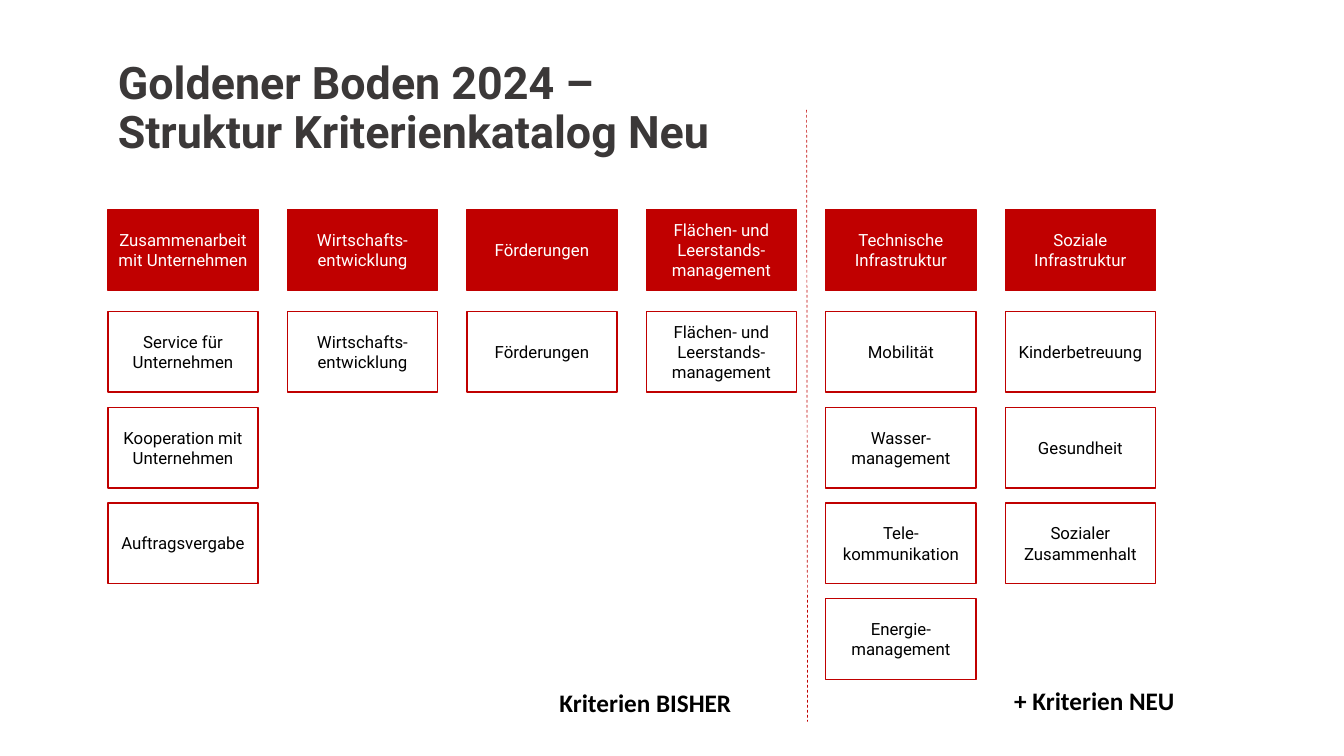
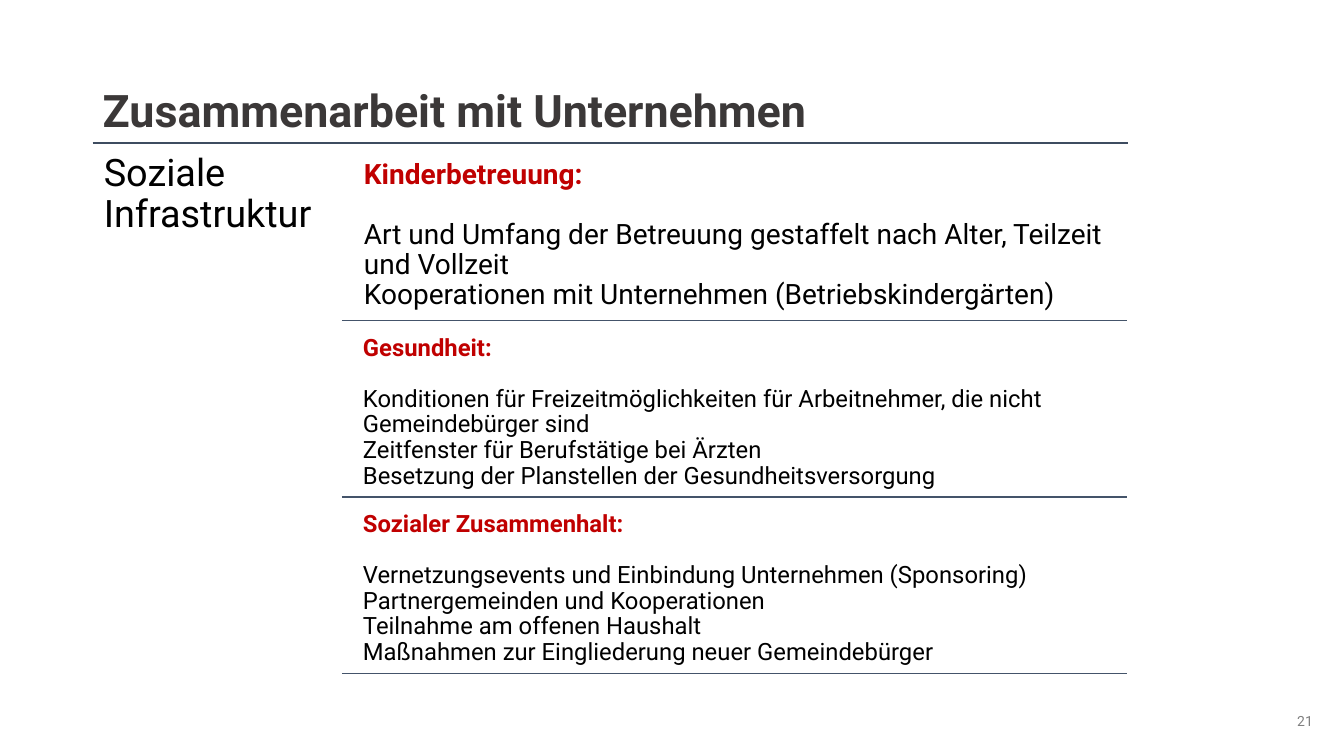
import pptx
import pptx.dml.color
import pptx.enum.dml
import pptx.enum.shapes
import pptx.enum.text
import pptx.oxml.ns
import pptx.util
from lxml import etree

Inches = pptx.util.Inches
Pt = pptx.util.Pt
ALIGN = pptx.enum.text.PP_ALIGN
ANCHOR = pptx.enum.text.MSO_ANCHOR

RED, BLACK, WHITE = "C00000", "000000", "FFFFFF"
TITLE_GREY, NUMBER_GREY = "3B3838", "808080"
RULE_DARK, RULE_BLUE = "3E4C60", "44546A"

TITLE_STYLE = {"size": 32, "bold": True, "color": TITLE_GREY}
TITLE_SIZE = (10.63, 1.45)
CAPTION_STYLE = {"name": "Calibri", "size": 18, "bold": True}

OVERVIEW_TITLE = ["Goldener Boden 2024 –", "Struktur Kriterienkatalog Neu"]
CATEGORIES = [
    ("Zusammenarbeit mit Unternehmen",
     ["Service für Unternehmen", "Kooperation mit Unternehmen", "Auftragsvergabe"]),
    ("Wirtschafts-entwicklung", ["Wirtschafts-entwicklung"]),
    ("Förderungen", ["Förderungen"]),
    ("Flächen- und Leerstands-management", ["Flächen- und Leerstands-management"]),
    ("Technische Infrastruktur",
     ["Mobilität", "Wasser-management", "Tele-kommunikation", "Energie-management"]),
    ("Soziale Infrastruktur",
     ["Kinderbetreuung", "Gesundheit", "Sozialer Zusammenhalt"]),
]
CAPTIONS = [
    ("Kriterien BISHER", (5.45, 6.77, 2.36, 0.4)),
    ("+ Kriterien NEU", (9.96, 6.75, 1.95, 0.4)),
]

DETAIL_TITLE = ["Zusammenarbeit mit Unternehmen"]
DETAIL_TOPIC = "Soziale Infrastruktur"
PAGE_NUMBER = "21"
# heading, text size, inset, lines
SECTIONS = [
    ("Kinderbetreuung:", 20, 0.08, [
        "Art und Umfang der Betreuung gestaffelt nach Alter, Teilzeit und Vollzeit",
        "Kooperationen mit Unternehmen (Betriebskindergärten)"]),
    ("Gesundheit:", 17, 0.07, [
        "Konditionen für Freizeitmöglichkeiten für Arbeitnehmer, die nicht "
        "Gemeindebürger sind",
        "Zeitfenster für Berufstätige bei Ärzten",
        "Besetzung der Planstellen der Gesundheitsversorgung"]),
    ("Sozialer Zusammenhalt:", 17, 0.07, [
        "Vernetzungsevents und Einbindung Unternehmen (Sponsoring)",
        "Partnergemeinden und Kooperationen",
        "Teilnahme am offenen Haushalt",
        "Maßnahmen zur Eingliederung neuer Gemeindebürger"]),
]

COLUMN_LEFT, COLUMN_STEP = 1.07, 1.78
HEADER_TOP, CRITERIA_TOP, CRITERIA_STEP = 2.08, 3.09, 0.95
CARD_SIZE = (1.49, 0.8)
SECTION_TOP, SECTION_STEP, SECTION_HEIGHT = 1.51, 1.75, 1.67


def rgb(value):
    return pptx.dml.color.RGBColor.from_string(value)


def add_paragraph(frame, text, style, **layout):
    """Fill the first paragraph while it is empty, otherwise append one."""
    para = frame.paragraphs[0]
    if para.runs:
        para = frame.add_paragraph()
    for name, value in layout.items():
        setattr(para, name, value)
    span = para.add_run()
    span.text = text
    values = {"name": "Roboto", "size": 12, "bold": False, "color": BLACK} | style
    span.font.color.rgb = rgb(values.pop("color"))
    values["size"] = Pt(values["size"])
    for name, value in values.items():
        setattr(span.font, name, value)


def add_text_box(page, place, anchor=ANCHOR.TOP, inset=None):
    box = page.shapes.add_textbox(*map(Inches, place))
    frame = box.text_frame
    frame.word_wrap = True
    frame.vertical_anchor = anchor
    if inset is not None:
        for side in ("left", "top", "right", "bottom"):
            setattr(frame, f"margin_{side}", Inches(inset))
    return frame


def add_title(page, lines, left, top):
    frame = add_text_box(page, (left, top, *TITLE_SIZE), ANCHOR.MIDDLE)
    for line in lines:
        add_paragraph(frame, line, TITLE_STYLE, line_spacing=0.9)


def add_line(page, start, end, color, width=1, dash=None):
    line = page.shapes.add_connector(
        pptx.enum.shapes.MSO_CONNECTOR.STRAIGHT, *map(Inches, start + end))
    line.line.color.rgb = rgb(color)
    line.line.width = Pt(width)
    if dash:
        line.line.dash_style = dash
    etree.SubElement(line._element.spPr, pptx.oxml.ns.qn("a:effectLst"))


def add_card(page, text, left, top, filled=False):
    card = page.shapes.add_shape(
        pptx.enum.shapes.MSO_SHAPE.RECTANGLE, *map(Inches, (left, top, *CARD_SIZE)))
    card.shadow.inherit = False
    card.line.color.rgb = rgb(RED)
    card.line.width = Pt(1)
    if filled:
        card.fill.solid()
        card.fill.fore_color.rgb = rgb(RED)
    else:
        card.fill.background()
    frame = card.text_frame
    frame.word_wrap = True
    frame.vertical_anchor = ANCHOR.MIDDLE
    add_paragraph(frame, text, {"color": WHITE if filled else BLACK},
                  alignment=ALIGN.CENTER)


def build_overview(page):
    add_title(page, OVERVIEW_TITLE, 1.07, 0.36)
    for column, (category, criteria) in enumerate(CATEGORIES):
        left = COLUMN_LEFT + column * COLUMN_STEP
        add_card(page, category, left, HEADER_TOP, filled=True)
        for row, criterion in enumerate(criteria):
            add_card(page, criterion, left, CRITERIA_TOP + row * CRITERIA_STEP)
    add_line(page, (8, 1.09), (8.01, 7.16), RED, 0.5,
             pptx.enum.dml.MSO_LINE.DASH)
    for text, place in CAPTIONS:
        add_paragraph(add_text_box(page, place), text, CAPTION_STYLE)


def build_detail(page):
    add_title(page, DETAIL_TITLE, 0.92, 0.4)
    number = add_text_box(page, (11.81, 6.95, 1.31, 0.4), ANCHOR.MIDDLE)
    add_paragraph(number, PAGE_NUMBER, {"size": 10, "color": NUMBER_GREY},
                  alignment=ALIGN.RIGHT)
    add_line(page, (0.92, 1.42), (11.19, 1.42), RULE_DARK)
    topic = add_text_box(page, (0.92, 1.42, 2.47, 5.34), inset=0.11)
    add_paragraph(topic, DETAIL_TOPIC, {"size": 27}, line_spacing=0.9)
    for index, (heading, size, inset, lines) in enumerate(SECTIONS):
        top = SECTION_TOP + index * SECTION_STEP
        bottom = top + SECTION_HEIGHT
        frame = add_text_box(page, (3.53, top, 7.64, SECTION_HEIGHT), inset=inset)
        add_paragraph(frame, heading, {"size": size, "bold": True, "color": RED},
                      line_spacing=0.9, space_after=Pt(round(size * 1.07)))
        for line in lines:
            add_paragraph(frame, line, {"size": size}, line_spacing=0.9)
        add_line(page, (3.39, bottom), (11.18, bottom), RULE_BLUE)


def main():
    deck = pptx.Presentation()
    deck.slide_width, deck.slide_height = Inches(13.33), Inches(7.5)
    for build in (build_overview, build_detail):
        build(deck.slides.add_slide(deck.slide_layouts[6]))
    deck.save("out.pptx")


if __name__ == "__main__":
    main()
